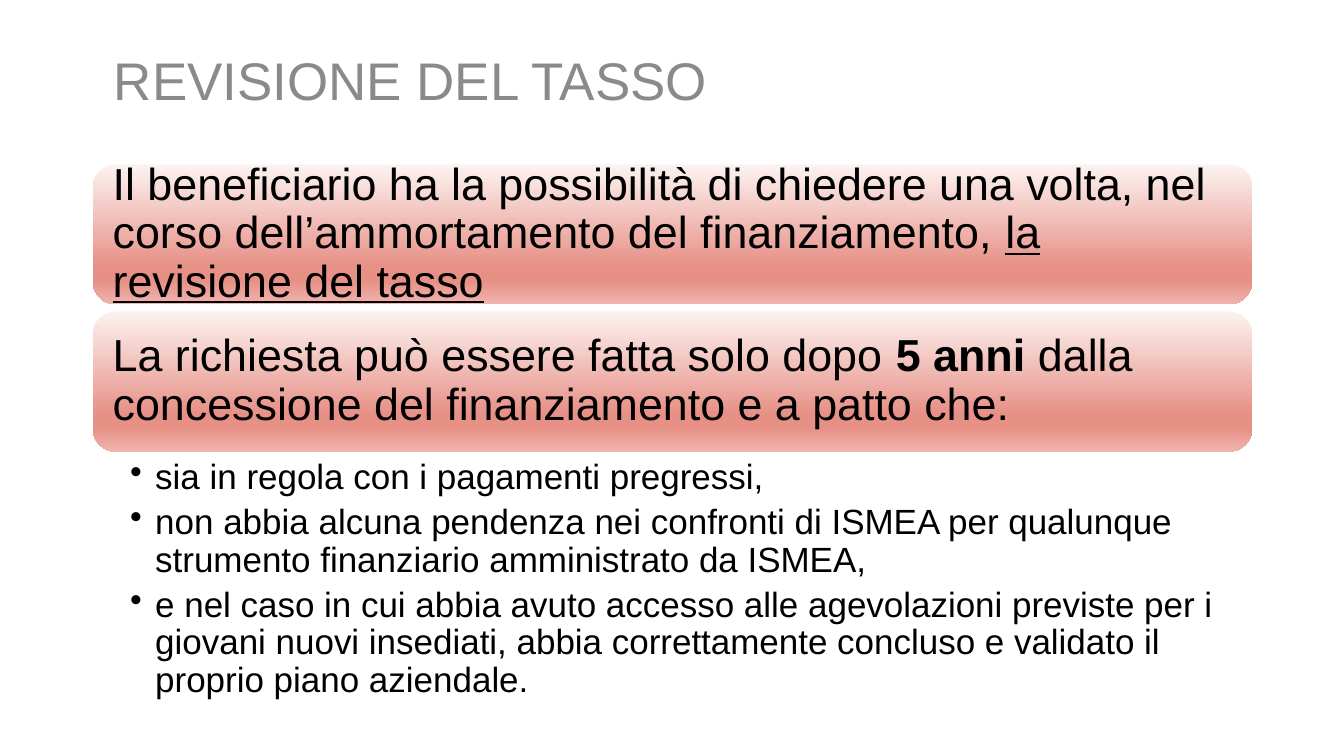
import lxml.etree
import pptx
import pptx.dml.color
import pptx.enum.shapes
import pptx.enum.text
import pptx.oxml
import pptx.oxml.ns
import pptx.util

Inches, Pt = pptx.util.Inches, pptx.util.Pt
qn = pptx.oxml.ns.qn

THEME = {
    "font": "Arial",
    "title": (37.8, "8A898C"),
    "statement": (32, "000000"),
    "condition": (25, "000000"),
    "gradient": [(0, "FCF3F1"), (74, "E79086"), (83, "E79086"), (100, "EFB5AE")],
}

WIDTH, HEIGHT = 13.33, 7.5
LEFT, CONTENT_WIDTH = 0.92, 11.5
BAND_TOP, BAND_HEIGHT, BAND_PITCH = 1.63, 1.39, 1.46
BULLET_INDENT = 0.25

STATEMENTS = [
    [("Il beneficiario ha la possibilità di chiedere una volta, nel corso "
      "dell’ammortamento del finanziamento, ", None),
     ("la revisione del tasso", "underline")],
    [("La richiesta può essere fatta solo dopo", None),
     (" 5 anni ", "bold"),
     ("dalla concessione del finanziamento e a patto che:", None)],
]
CONDITIONS = [
    "sia in regola con i pagamenti pregressi,",
    "non abbia alcuna pendenza nei confronti di ISMEA per qualunque strumento "
    "finanziario amministrato da ISMEA,",
    "e nel caso in cui abbia avuto accesso alle agevolazioni previste per i giovani "
    "nuovi insediati, abbia correttamente concluso e validato il proprio piano aziendale.",
]


def set_frame(frame, left, top, right, bottom):
    """Wrap the text and set its insets in inches."""
    frame.word_wrap = True
    frame.margin_left, frame.margin_top = Inches(left), Inches(top)
    frame.margin_right, frame.margin_bottom = Inches(right), Inches(bottom)


def style_paragraph(paragraph, role):
    size, color = THEME[role]
    paragraph.alignment = pptx.enum.text.PP_ALIGN.LEFT
    paragraph.line_spacing = 0.9
    paragraph.font.name = THEME["font"]
    paragraph.font.size = Pt(size)
    paragraph.font.color.rgb = pptx.dml.color.RGBColor.from_string(color)


presentation = pptx.Presentation()
presentation.slide_width, presentation.slide_height = Inches(WIDTH), Inches(HEIGHT)
slide = presentation.slides.add_slide(presentation.slide_layouts[6])

# Title
title = slide.shapes.add_textbox(Inches(1.13), Inches(0.53), Inches(10.38), Inches(0.55)).text_frame
set_frame(title, 0, 0.01, 0, 0)
title.text = "REVISIONE DEL TASSO"
style_paragraph(title.paragraphs[0], "title")

# Statement bands
for row, statement in enumerate(STATEMENTS):
    band = slide.shapes.add_shape(
        pptx.enum.shapes.MSO_SHAPE.ROUNDED_RECTANGLE,
        Inches(LEFT), Inches(BAND_TOP + row * BAND_PITCH),
        Inches(CONTENT_WIDTH), Inches(BAND_HEIGHT))
    band.shadow.inherit = False
    band.line.fill.background()
    band.fill.gradient()
    band.fill.gradient_angle = 270
    stops = band.fill._fill._gradFill.find(qn("a:gsLst"))
    for stop in list(stops):
        stops.remove(stop)
    for position, color in THEME["gradient"]:
        stop = lxml.etree.SubElement(stops, qn("a:gs"), pos=str(position * 1000))
        lxml.etree.SubElement(stop, qn("a:srgbClr"), val=color)

    set_frame(band.text_frame, 0.13, 0.13, 0.13, 0.13)
    band.text_frame.vertical_anchor = pptx.enum.text.MSO_ANCHOR.MIDDLE
    paragraph = band.text_frame.paragraphs[0]
    style_paragraph(paragraph, "statement")
    for words, emphasis in statement:
        run = paragraph.add_run()
        run.text = words
        if emphasis:
            setattr(run.font, emphasis, True)

# Conditions
conditions = slide.shapes.add_textbox(
    Inches(LEFT), Inches(4.52), Inches(CONTENT_WIDTH), Inches(2.17)).text_frame
set_frame(conditions, 0.37, 0.04, 0.25, 0.04)
for index, condition in enumerate(CONDITIONS):
    paragraph = conditions.add_paragraph() if index else conditions.paragraphs[0]
    paragraph.text = condition
    properties = paragraph._p.get_or_add_pPr()
    properties.set("marL", str(Inches(BULLET_INDENT)))
    properties.set("indent", str(-Inches(BULLET_INDENT)))
    lxml.etree.SubElement(properties, qn("a:buChar"), char="•")
    style_paragraph(paragraph, "condition")
    paragraph.space_after = Pt(5)

presentation.save("out.pptx")
